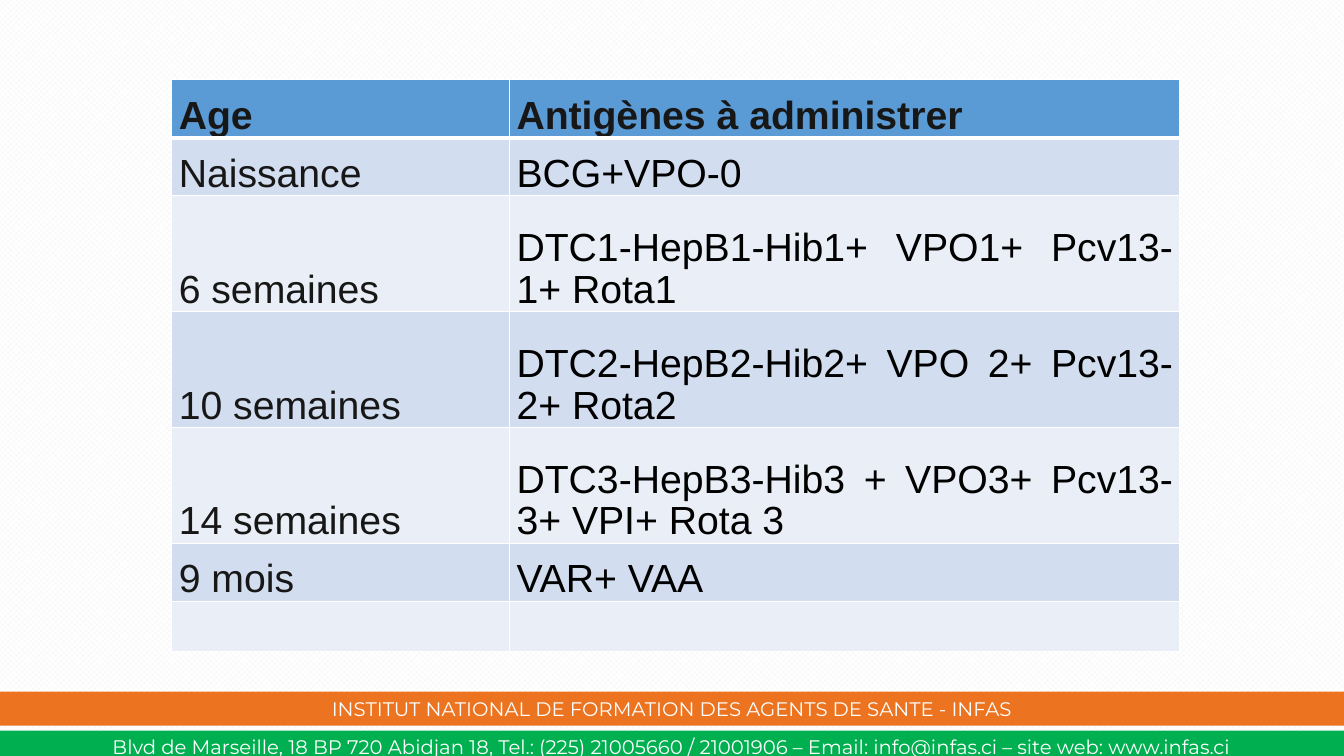
from lxml.etree import SubElement
from pptx import Presentation
from pptx.dml.color import RGBColor
from pptx.enum.dml import MSO_PATTERN
from pptx.enum.shapes import MSO_SHAPE
from pptx.enum.text import MSO_ANCHOR as ANCHOR, PP_ALIGN as ALIGN
from pptx.oxml.ns import qn
from pptx.util import Inches, Pt

COLORS = {
    "white": "FFFFFF", "weave": "F2F2F2", "black": "000000", "ink": "181717",
    "header": "5B9BD5", "band": "D2DEEF", "light": "EAEFF7",
    "orange": "EC7320", "green": "00B050",
}

SCHEDULE = [
    ("Age", "Antigènes à administrer"),
    ("Naissance", "BCG+VPO-0"),
    ("6 semaines", "DTC1-HepB1-Hib1+ VPO1+ Pcv13-1+ Rota1"),
    ("10 semaines", "DTC2-HepB2-Hib2+ VPO 2+ Pcv13-2+ Rota2"),
    ("14 semaines", "DTC3-HepB3-Hib3 + VPO3+ Pcv13-3+ VPI+ Rota 3"),
    ("9 mois", "VAR+ VAA"),
    ("", ""),
]
# Shares of the slide's size, in percent
COLUMN_SHARES = [25.13, 49.88]
ROW_SHARES = [7.67, 7.67, 15.33, 15.33, 15.33, 7.67, 6.67]


def rgb(name):
    return RGBColor.from_string(COLORS[name])


class SlideBuilder:
    table_font, band_font = "Arial", "Montserrat"

    def __init__(self, prs):
        self.width, self.height = prs.slide_width, prs.slide_height
        self.slide = prs.slides.add_slide(prs.slide_layouts[6])

    def x(self, share):
        return round(self.width * share / 100)

    def y(self, share):
        return round(self.height * share / 100)

    def background(self):
        fill = self.slide.background.fill
        fill.patterned()
        fill.pattern = MSO_PATTERN.SOLID_DIAMOND
        fill.fore_color.rgb = rgb("weave")
        fill.back_color.rgb = rgb("white")

    def add_run(self, p, text, font, size, color, bold=False):
        r = p.add_run()
        r.text = text
        r.font.name, r.font.size, r.font.bold = font, Pt(size), bold
        r.font.color.rgb = rgb(color)

    def footer_band(self, top, height, color, text, anchor):
        sp = self.slide.shapes.add_shape(
            MSO_SHAPE.RECTANGLE, 0, self.y(top), self.width, self.y(height))
        sp.shadow.inherit = False
        sp.fill.solid()
        sp.fill.fore_color.rgb = rgb(color)
        sp.line.fill.background()
        tf = sp.text_frame
        tf.word_wrap = True
        tf.vertical_anchor = anchor
        tf.margin_top = tf.margin_bottom = 0
        p = tf.paragraphs[0]
        p.alignment = ALIGN.CENTER
        self.add_run(p, text, self.band_font, 14, color="white")

    def border(self, cell, side, points):
        ln = SubElement(cell._tc.get_or_add_tcPr(), qn(f"a:ln{side}"), w=str(Pt(points)))
        fill = SubElement(ln, qn("a:solidFill"))
        SubElement(fill, qn("a:srgbClr"), val=COLORS["white"])

    def cell(self, cell, text, row, col):
        cell.margin_left = cell.margin_right = Inches(0.07)
        cell.margin_top = cell.margin_bottom = 0
        cell.vertical_anchor = ANCHOR.BOTTOM
        # The rule under the header is thicker than the others
        heavy = {(0, "B"), (1, "T")}
        for side in "LRTB":
            self.border(cell, side, 3 if (row, side) in heavy else 1)
        cell.fill.solid()
        shade = "header" if row == 0 else "band" if row % 2 else "light"
        cell.fill.fore_color.rgb = rgb(shade)
        if text:
            p = cell.text_frame.paragraphs[0]
            p.alignment = ALIGN.JUSTIFY
            p.line_spacing = 0.96
            color = "black" if row and col else "ink"
            self.add_run(p, text, self.table_font, 28, color, bold=row == 0)

    def table(self, left, top, rows):
        table = self.slide.shapes.add_table(
            len(rows), len(rows[0]), self.x(left), self.y(top),
            self.x(sum(COLUMN_SHARES)), self.y(sum(ROW_SHARES))).table
        for column, share in zip(table.columns, COLUMN_SHARES):
            column.width = self.x(share)
        for line, share in zip(table.rows, ROW_SHARES):
            line.height = self.y(share)
        for i, texts in enumerate(rows):
            for j, text in enumerate(texts):
                self.cell(table.cell(i, j), text, i, j)


def main():
    prs = Presentation()
    prs.slide_width, prs.slide_height = Inches(13.33), Inches(7.5)
    s = SlideBuilder(prs)
    s.background()

    # Institute footer
    s.footer_band(96.65, 3.7, "green",
                  "Blvd de Marseille, 18 BP 720 Abidjan 18, Tel.: (225) 21005660 / 21001906"
                  " – Email: info@infas.ci – site web: www.infas.ci", ANCHOR.BOTTOM)
    s.footer_band(91.5, 4.5, "orange",
                  "INSTITUT NATIONAL DE FORMATION DES AGENTS DE SANTE - INFAS", ANCHOR.MIDDLE)

    # Vaccination schedule
    s.table(12.78, 10.55, SCHEDULE)
    prs.save("out.pptx")


if __name__ == "__main__":
    main()
